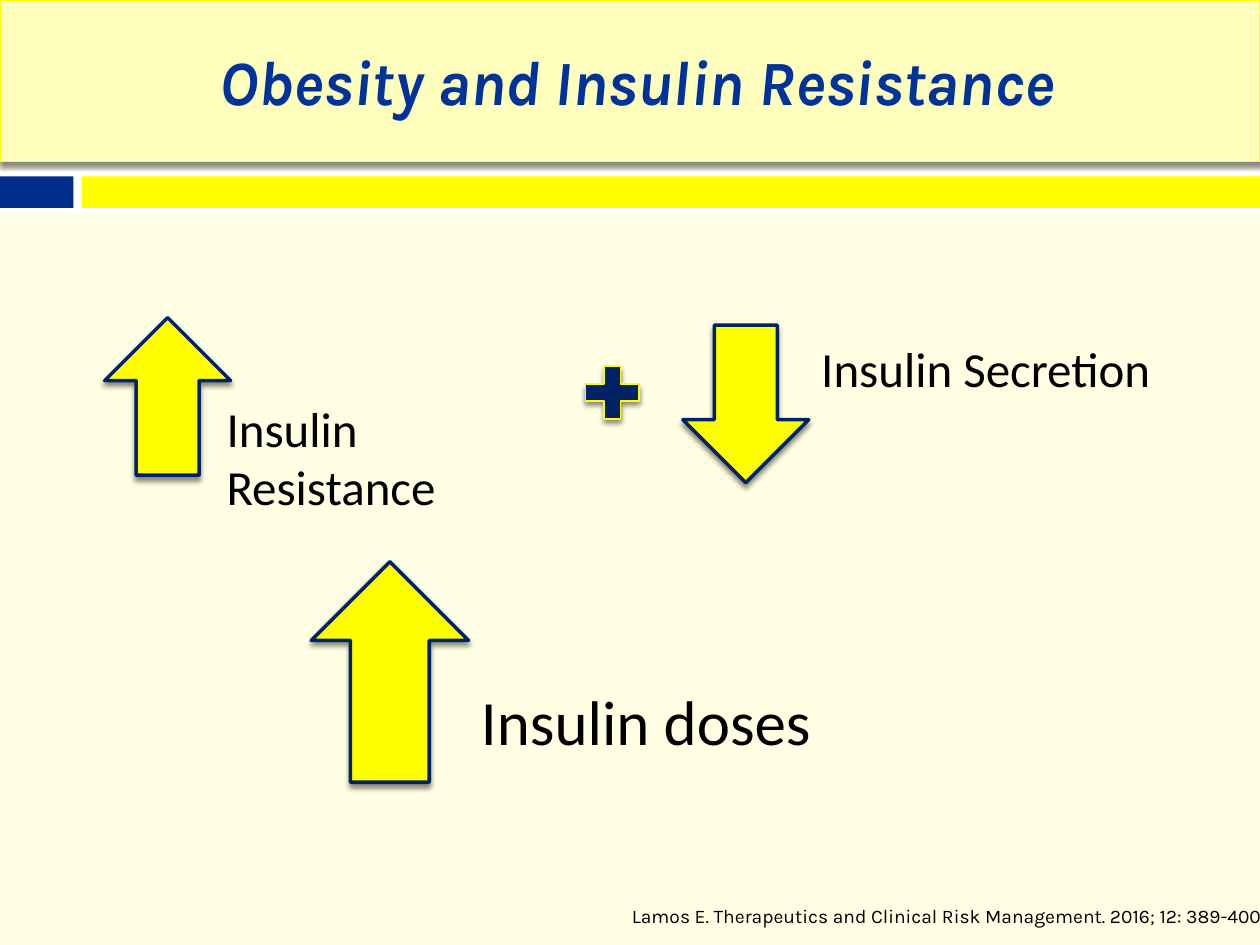
"""Build the slide on obesity and insulin resistance."""
from lxml.etree import SubElement
from pptx import Presentation
from pptx.dml.color import RGBColor
from pptx.enum.shapes import MSO_SHAPE
from pptx.enum.text import MSO_ANCHOR, PP_ALIGN
from pptx.oxml.ns import qn
from pptx.util import Pt

COLORS = {"background": "FFFFE3", "white": "FFFFFF", "blue": "002D89", "yellow": "FFFF00",
          "header": "FFFFBD", "title": "003399", "navy": "002267", "black": "000000"}
WIDTH, HEIGHT = 720, 540
HEADER = (0, 0, WIDTH, 92.16)
TITLE = " Obesity and Insulin Resistance"
CITATION = "Lamos E. Therapeutics and Clinical Risk Management. 2016; 12: 389-400"
BANDS = [
    ("white", (0, 97.2, WIDTH, 25.2)),
    ("blue", (0, 100.8, 42, 18)),
    ("yellow", (46.8, 100.8, WIDTH - 46.8, 18)),
]
PLUS = (329, 203.8, 41.8, 41)
FACTORS = [
    ("Insulin Resistance", 28, (122.4, 224, 208, 41),
     MSO_SHAPE.UP_ARROW, (59.8, 181.5, 72, 90)),
    ("Insulin Secretion", 28, (462.2, 190, 228, 41),
     MSO_SHAPE.DOWN_ARROW, (390.2, 185.8, 72, 90)),
    ("Insulin doses", 36, (267.8, 386.6, 208, 51),
     MSO_SHAPE.UP_ARROW, (177.8, 321, 90, 126)),
]


def color(name):
    return RGBColor.from_string(COLORS[name])


def add_shadow(shape):
    effects = shape._element.spPr.find(qn("a:effectLst"))
    shadow = SubElement(effects, qn("a:outerShdw"), blurRad=str(Pt(3)), dist=str(Pt(2.4)),
                        dir="5400000", rotWithShape="0")
    black = SubElement(shadow, qn("a:srgbClr"), val=COLORS["black"])
    SubElement(black, qn("a:alpha"), val="45000")


def add_block(slide, kind, box, fill, line=None, weight=0.79):
    block = slide.shapes.add_shape(kind, *map(Pt, box))
    block.shadow.inherit = False
    block.fill.solid()
    block.fill.fore_color.rgb = color(fill)
    if line:
        block.line.color.rgb = color(line)
        block.line.width = Pt(weight)
        add_shadow(block)
    else:
        block.line.fill.background()
    return block


def add_label(slide, text, box, size, font, ink="black"):
    frame = slide.shapes.add_textbox(*map(Pt, box)).text_frame
    frame.word_wrap = True
    frame.text = text
    style = frame.paragraphs[0].runs[0].font
    style.name, style.size, style.color.rgb = font, Pt(size), color(ink)
    return frame


def main():
    deck = Presentation()
    deck.slide_width, deck.slide_height = Pt(WIDTH), Pt(HEIGHT)
    slide = deck.slides.add_slide(deck.slide_layouts[6])
    slide.background.fill.solid()
    slide.background.fill.fore_color.rgb = color("background")

    for fill, box in BANDS:
        add_block(slide, MSO_SHAPE.RECTANGLE, box, fill)
    add_block(slide, MSO_SHAPE.RECTANGLE, HEADER, "header", "yellow")
    title = add_label(slide, TITLE, HEADER, 36, "Karla", "title")
    title.vertical_anchor = MSO_ANCHOR.MIDDLE
    heading = title.paragraphs[0]
    heading.alignment = PP_ALIGN.CENTER
    heading.runs[0].font.bold = heading.runs[0].font.italic = True

    add_label(slide, CITATION, (354, 513.4, 377.3, 33.8), 11, "Karla")
    for name, size, label_box, arrow, arrow_box in FACTORS:
        add_block(slide, arrow, arrow_box, "yellow", "navy", 2)
        add_label(slide, name, label_box, size, "Calibri")
    add_block(slide, MSO_SHAPE.MATH_PLUS, PLUS, "navy", "yellow")
    deck.save("out.pptx")


if __name__ == "__main__":
    main()
